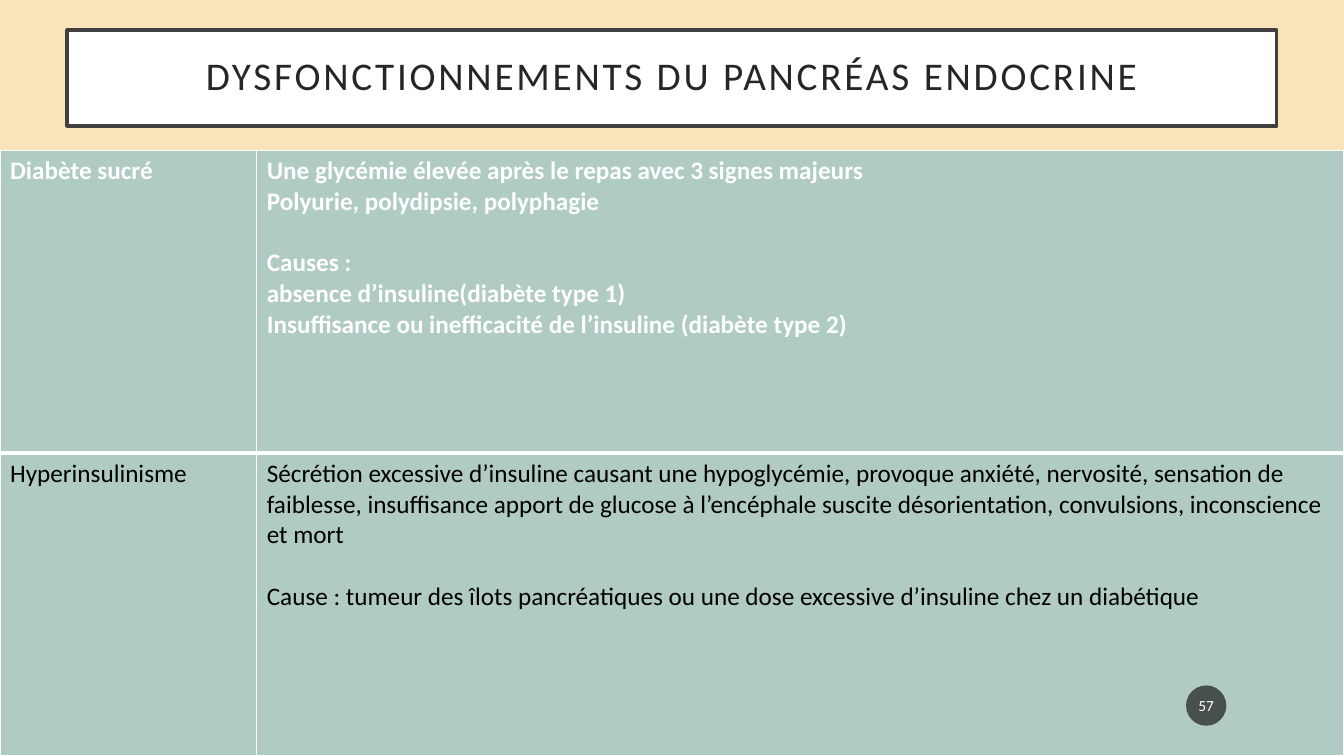
from pptx import Presentation
from pptx.dml.color import RGBColor
from pptx.enum.shapes import MSO_SHAPE
from pptx.enum.text import MSO_ANCHOR, PP_ALIGN
from pptx.oxml.ns import qn
from pptx.util import Pt
from lxml.etree import SubElement

WIDTH, HEIGHT = 960, 540
WHITE, SAGE = "FFFFFF", "B0CAC4"
GAP = 22  # one line of 18 pt text

# Each cell lists (text, space before) pairs
ROWS = [
    [
        [("Diabète sucré", 0)],
        [
            ("Une glycémie élevée après le repas avec 3 signes majeurs", 0),
            ("Polyurie, polydipsie, polyphagie", 0),
            ("Causes :", GAP),
            ("absence d’insuline(diabète type 1)", 0),
            ("Insuffisance ou inefficacité de l’insuline (diabète type 2)", 0),
        ],
    ],
    [
        [("Hyperinsulinisme", 0)],
        [
            ("Sécrétion excessive d’insuline causant une hypoglycémie, provoque "
             "anxiété, nervosité, sensation de faiblesse, insuffisance apport de "
             "glucose à l’encéphale suscite désorientation, convulsions, "
             "inconscience et mort", 0),
            ("Cause : tumeur des îlots pancréatiques ou une dose excessive "
             "d’insuline chez un diabétique", GAP),
        ],
    ],
]


def paint(fill, color):
    fill.solid()
    fill.fore_color.rgb = RGBColor.from_string(color)


def write(frame, lines, size=18, color="000000", bold=False,
          align=PP_ALIGN.LEFT, lead=None, track=0):
    for i, (text, gap) in enumerate(lines):
        para = frame.add_paragraph() if i else frame.paragraphs[0]
        para.alignment = align
        para.space_before = Pt(gap)
        if lead:
            para.line_spacing = lead
        run = para.add_run()
        run.text = text
        font = run.font
        font.name, font.size, font.bold = "Calibri", Pt(size), bold
        font.color.rgb = RGBColor.from_string(color)
        if track:
            font._element.set("spc", str(track * 100))


def add_box(slide, kind, place, color, inset):
    box = slide.shapes.add_shape(kind, *map(Pt, place))
    box.shadow.inherit = False
    paint(box.fill, color)
    box.line.fill.background()
    frame = box.text_frame
    frame.word_wrap = True
    frame.vertical_anchor = MSO_ANCHOR.MIDDLE
    frame.margin_left = frame.margin_right = Pt(inset[0])
    frame.margin_top = frame.margin_bottom = Pt(inset[1])
    return box


def add_title(slide, text):
    box = add_box(slide, MSO_SHAPE.RECTANGLE, (48, 21.6, 864, 68.4),
                  WHITE, (14.4, 14.4))
    paint(box.line.fill, "404040")
    box.line.width = Pt(2.5)
    write(box.text_frame, [(text, 0)], size=28, color="262626",
          align=PP_ALIGN.CENTER, lead=0.9, track=2)


def add_edges(cell, **widths):
    # Borders precede the fill in the cell properties
    props = cell._tc.get_or_add_tcPr()
    for i, (side, width) in enumerate(widths.items()):
        edge = SubElement(props, qn("a:ln" + side), w=str(Pt(width)))
        solid = SubElement(edge, qn("a:solidFill"))
        SubElement(solid, qn("a:srgbClr"), val=WHITE)
        props.insert(i, edge)


def add_grid(slide, top):
    tall = HEIGHT - top
    grid = slide.shapes.add_table(2, 2, 0, Pt(top), Pt(WIDTH), Pt(tall)).table
    for col, width in zip(grid.columns, (183.4, WIDTH - 183.4)):
        col.width = Pt(width)
    for r, row in enumerate(ROWS):
        grid.rows[r].height = Pt(tall / 2)
        head = r == 0
        for c, lines in enumerate(row):
            cell = grid.cell(r, c)
            paint(cell.fill, SAGE)
            add_edges(cell, L=1, R=1, T=1 if head else 3, B=3 if head else 1)
            write(cell.text_frame, lines, bold=head,
                  color=WHITE if head else "000000")


def add_badge(slide, text):
    badge = add_box(slide, MSO_SHAPE.OVAL, (847.2, 489.6, 28.8, 28.8),
                    "1D1D1D", (1.44, 3.6))
    tint = badge.fill._xPr.find(".//" + qn("a:srgbClr"))
    SubElement(tint, qn("a:alpha"), val="70000")
    write(badge.text_frame, [(text, 0)], size=11, color=WHITE,
          align=PP_ALIGN.CENTER)


def main():
    deck = Presentation()
    deck.slide_width, deck.slide_height = Pt(WIDTH), Pt(HEIGHT)
    slide = deck.slides.add_slide(deck.slide_layouts[6])
    paint(slide.background.fill, "F9E3B9")
    add_title(slide, "DYSFONCTIONNEMENTS DU PANCRÉAS ENDOCRINE")
    add_grid(slide, 107.5)
    add_badge(slide, "57")
    deck.save("out.pptx")


if __name__ == "__main__":
    main()
